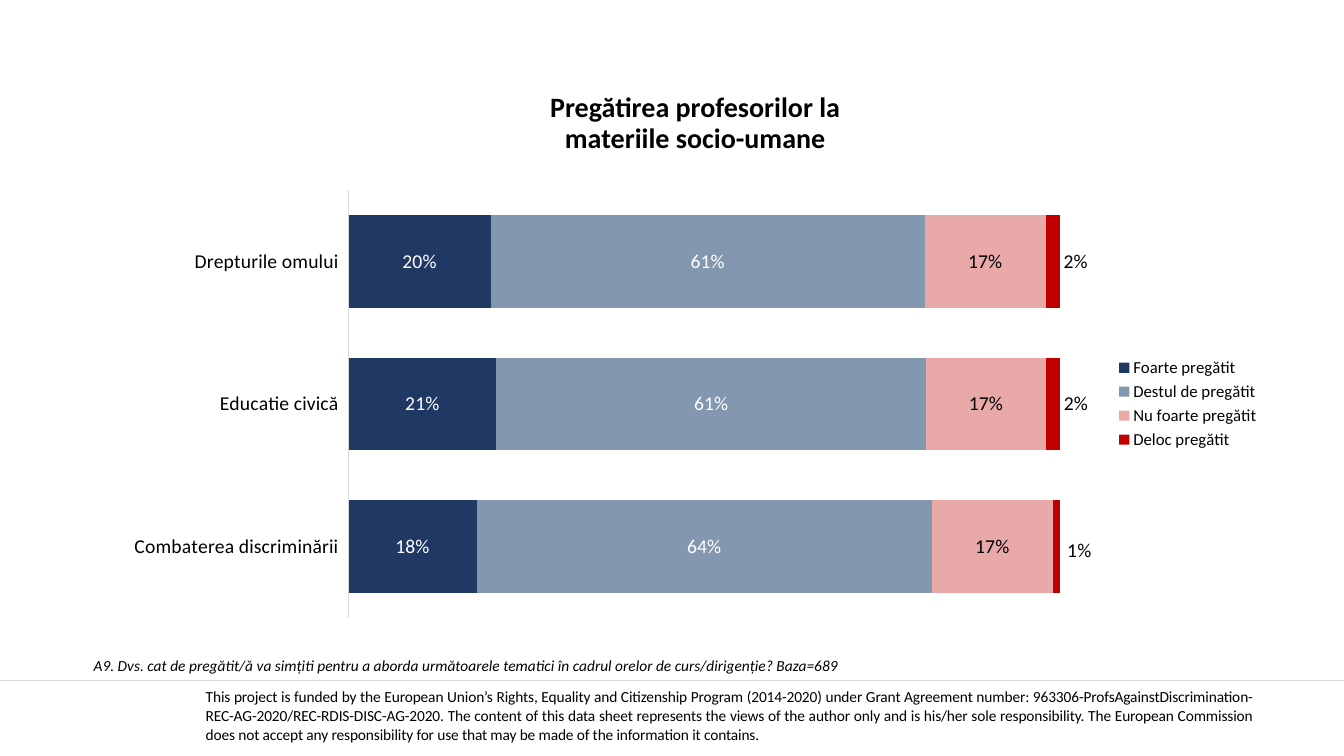
from dataclasses import dataclass

from lxml import etree
from pptx import Presentation
from pptx.chart.data import CategoryChartData
from pptx.dml.color import RGBColor
from pptx.enum.chart import XL_CHART_TYPE as Kind
from pptx.enum.chart import XL_LABEL_POSITION as Spot
from pptx.enum.chart import XL_LEGEND_POSITION as Side
from pptx.enum.chart import XL_TICK_LABEL_POSITION as Tags
from pptx.enum.chart import XL_TICK_MARK as Tick
from pptx.enum.shapes import MSO_CONNECTOR as Link
from pptx.enum.text import MSO_ANCHOR as Anchor
from pptx.enum.text import MSO_AUTO_SIZE as Fit
from pptx.enum.text import PP_ALIGN as Align
from pptx.oxml import parse_xml
from pptx.oxml.ns import nsdecls, qn
from pptx.util import Inches, Pt


@dataclass(frozen=True)
class Theme:
    face: str = "Calibri"
    black: str = "000000"
    white: str = "FFFFFF"
    rule: str = "D9D9D9"
    navy: str = "203864"
    slate: str = "8497B0"
    pink: str = "E9A9A9"
    red: str = "C00000"
    title: int = 20
    label: int = 14
    legend: int = 12
    base: int = 10
    note: int = 11


THEME = Theme()
PERCENT = "###0%"

TITLE = ["Pregătirea profesorilor la", "materiile socio-umane"]
QUESTION = ("A9. Dvs. cat de pregătit/ă va simțiti pentru a aborda următoarele "
            "tematici în cadrul orelor de curs/dirigenție? Baza=689")
FUNDING = (
    "This project is funded by the European Union’s Rights, Equality and "
    "Citizenship Program (2014-2020) under Grant Agreement number: "
    "963306-ProfsAgainstDiscrimination-REC-AG-2020/REC-RDIS-DISC-AG-2020. "
    "The content of this data sheet represents the views of the author only "
    "and is his/her sole responsibility. The European Commission does not "
    "accept any responsibility for use that may be made of the information "
    "it contains.")

TOPICS = ["Drepturile omului", "Educatie civică", "Combaterea discriminării"]
# Answer, shares by topic, bar colour, label colour
ANSWERS = [
    ("Foarte pregătit", (0.2, 0.21, 0.18), THEME.navy, THEME.white),
    ("Destul de pregătit", (0.61, 0.61, 0.64), THEME.slate, THEME.white),
    ("Nu foarte pregătit", (0.17, 0.17, 0.17), THEME.pink, THEME.black),
    ("Deloc pregătit", (0.02, 0.02, 0.01), THEME.red, THEME.black),
]
# Shift of the last answer's labels, as shares of the chart's size
SHIFTS = [(0.02, 0), (0.02, 0), (0.02, 0.01)]
PLOT = {"x": 0.198, "y": 0.034, "w": 0.619, "h": 0.933}


def style(font, size, color=THEME.black, bold=False, italic=False):
    font.name = THEME.face
    font.size = Pt(size)
    font.bold = bold
    font.italic = italic
    font.color.rgb = RGBColor.from_string(color)


def place(shape, *box):
    shape.left, shape.top, shape.width, shape.height = map(Inches, box)


def layout(sizes, inner=False):
    modes = {"xMode": "edge", "yMode": "edge"} if inner else {}
    target = {"layoutTarget": "inner"} if inner else {}
    parts = {**target, **modes, **sizes}
    body = "".join(f'<c:{key} val="{val}"/>' for key, val in parts.items())
    return parse_xml(f'<c:layout {nsdecls("c")}><c:manualLayout>{body}'
                     '</c:manualLayout></c:layout>')


def add_title(slide):
    title = slide.shapes.title
    place(title, 3.29, 0.91, 7.21, 0.64)
    frame = title.text_frame
    frame.auto_size = Fit.NONE
    frame.vertical_anchor = Anchor.MIDDLE
    frame.text = "\n".join(TITLE)
    for para in frame.paragraphs:
        para.alignment = Align.CENTER
        para.line_spacing = 0.9
        para.space_before = Pt(0)
        style(para.font, THEME.title, bold=True)


def add_note(slide):
    box = slide.shapes.add_textbox(*map(Inches, (0.83, 6.46, 10.52, 0.29)))
    frame = box.text_frame
    frame.word_wrap = True
    frame.auto_size = Fit.SHAPE_TO_FIT_TEXT
    para = frame.paragraphs[0]
    para.text = QUESTION
    style(para.font, THEME.note, italic=True)


def add_rule(slide):
    line = slide.shapes.add_connector(
        Link.STRAIGHT, *map(Inches, (0, 6.75, 13.33, 6.75)))
    line.line.color.rgb = RGBColor.from_string(THEME.rule)
    line.line.width = Pt(0.5)
    etree.SubElement(line._element.spPr, qn("a:effectLst"))


def add_funding(slide):
    frame = slide.shapes.add_table(
        1, 1, *map(Inches, (2.04, 6.59, 10.39, 1.04)))
    table = frame.table
    table.first_row = table.horz_banding = False
    cell = table.cell(0, 0)
    cell.fill.background()
    cell.vertical_anchor = Anchor.MIDDLE
    cell.margin_left = cell.margin_right = 0
    cell.margin_top = cell.margin_bottom = 0
    # No borders
    props = cell._tc.get_or_add_tcPr()
    for spot, edge in enumerate(("lnL", "lnR", "lnT", "lnB")):
        props.insert(spot, parse_xml(
            f'<a:{edge} {nsdecls("a")}><a:noFill/></a:{edge}>'))
    para = cell.text_frame.paragraphs[0]
    para.text = FUNDING
    para.alignment = Align.JUSTIFY
    style(para.font, THEME.note)
    para.runs[0].font._element.set("spc", "-10")


def style_axes(chart):
    topic = chart.category_axis
    topic.reverse_order = True
    topic.major_tick_mark = topic.minor_tick_mark = Tick.NONE
    topic.tick_label_position = Tags.LOW
    topic.format.line.color.rgb = RGBColor.from_string(THEME.rule)
    topic.format.line.width = Pt(0.75)
    style(topic.tick_labels.font, THEME.label)
    share = chart.value_axis
    share.minimum_scale, share.maximum_scale = 0, 1
    share.has_major_gridlines = False
    share.tick_labels.number_format = PERCENT
    share.tick_labels.number_format_is_linked = False
    share.visible = False


def style_bars(series, fill, ink):
    series.format.fill.solid()
    series.format.fill.fore_color.rgb = RGBColor.from_string(fill)
    labels = series.data_labels
    labels.show_value = True
    labels.number_format = PERCENT
    labels.number_format_is_linked = False
    labels.position = Spot.CENTER
    style(labels.font, THEME.label, ink)


def shift_labels(series):
    for spot, (right, down) in enumerate(SHIFTS):
        label = series.points[spot].data_label
        style(label.font, THEME.label)
        label.position = Spot.CENTER
        node = label._get_or_add_dLbl()
        node.insert(1, layout({"x": right, "y": down}))
        node.insert(2, parse_xml(
            f'<c:numFmt {nsdecls("c")} formatCode="{PERCENT}" '
            'sourceLinked="0"/>'))


def add_bars(slide):
    data = CategoryChartData(number_format=PERCENT)
    data.categories = TOPICS
    for name, shares, _, _ in ANSWERS:
        data.add_series(name, shares)
    chart = slide.shapes.add_chart(
        Kind.BAR_STACKED_100, *map(Inches, (1.2, 1.73, 11.4, 4.55)),
        data).chart
    chart.has_title = False
    style(chart.font, THEME.base)
    style_axes(chart)
    # Legend
    chart.has_legend = True
    chart.legend.position = Side.RIGHT
    chart.legend.include_in_layout = False
    style(chart.legend.font, THEME.legend)
    # Bars and their labels
    plot = chart.plots[0]
    plot.gap_width, plot.overlap = 54, 100
    for series, (_, _, fill, ink) in zip(plot.series, ANSWERS):
        style_bars(series, fill, ink)
    shift_labels(plot.series[-1])
    # Plot area
    area = chart._chartSpace.chart.plotArea
    for old in area.findall(qn("c:layout")):
        area.remove(old)
    area.insert(0, layout(PLOT, inner=True))


def main():
    deck = Presentation()
    deck.slide_width, deck.slide_height = Inches(13.33), Inches(7.5)
    slide = deck.slides.add_slide(deck.slide_layouts[5])
    add_funding(slide)
    add_rule(slide)
    add_note(slide)
    add_title(slide)
    add_bars(slide)
    deck.save("out.pptx")


if __name__ == "__main__":
    main()
